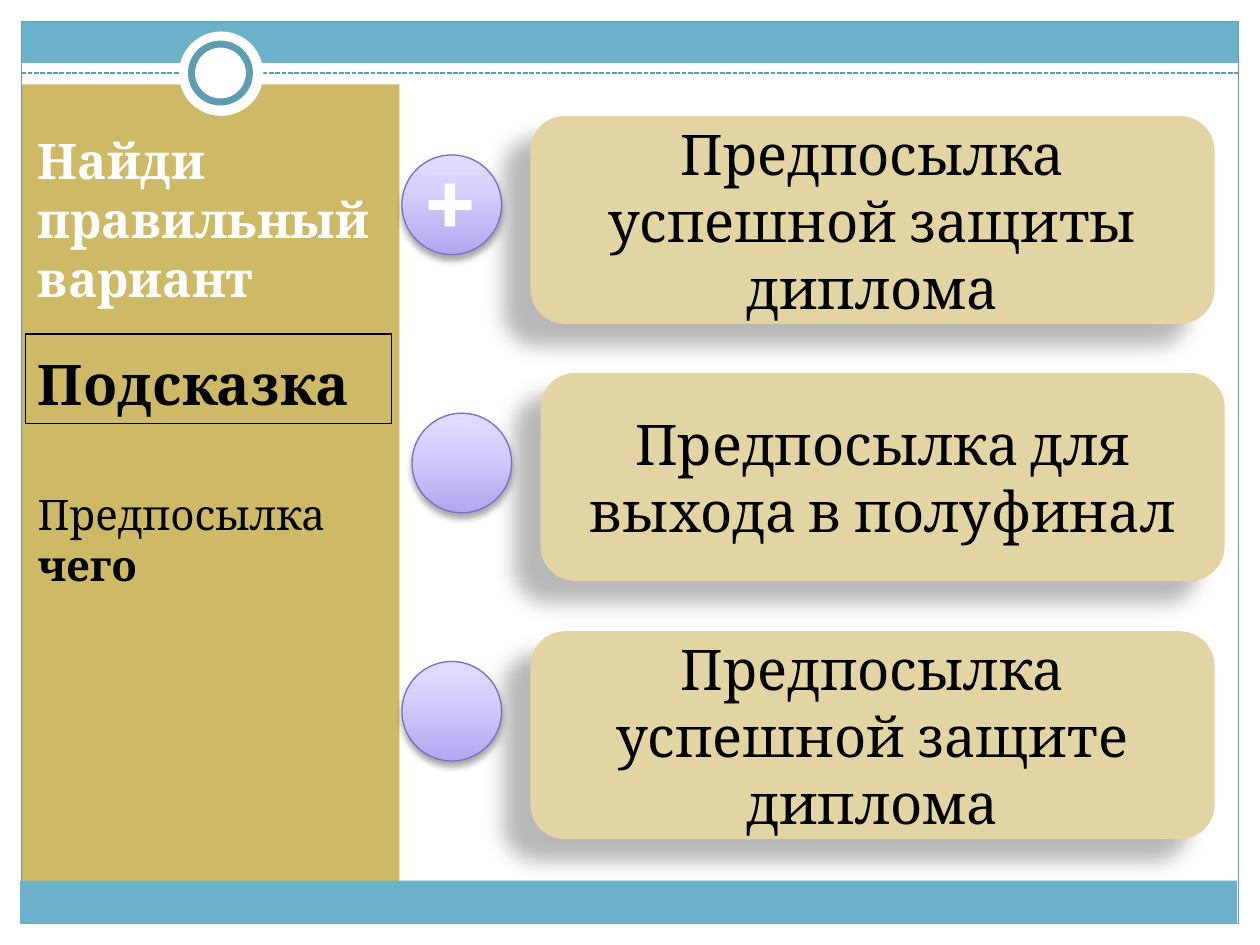
from copy import deepcopy
from dataclasses import dataclass

from lxml import etree
from pptx import Presentation, util as u
from pptx.dml.color import RGBColor
from pptx.enum import dml, shapes, text
from pptx.oxml import ns

KIND = shapes.MSO_SHAPE
LEFT, MID = text.PP_ALIGN.LEFT, text.PP_ALIGN.CENTER


@dataclass(frozen=True)
class Theme:
    font: str = "Cambria"
    blue: str = "6BB1C9"
    edge: str = "5E9CB1"
    gold: str = "CEB966"
    sand: str = "E2D5A3"
    rim: str = "7E6BC9"
    white: str = "FFFFFF"
    black: str = "000000"
    glow: tuple = ((0, "B2A6F0"), (0.65, "D7D0FD"), (1, "E1DDFF"))
    hint: int = 24
    task: int = 28
    main: int = 32
    mark: int = 60
    thin: float = 0.75


class Deck:
    """Draw styled elements on the current slide."""

    def __init__(self, theme):
        self.theme = theme
        self.prs = Presentation()
        self.prs.slide_width, self.prs.slide_height = u.Inches(10), u.Inches(7.5)
        self.slide = self.prs.slides.add_slide(self.prs.slide_layouts[5])

    def rgb(self, code):
        return RGBColor.from_string(code)

    def line(self, item, color, width):
        item.line.color.rgb = self.rgb(color)
        item.line.width = u.Pt(width)

    def shape(self, kind, box, fill=None, line=None, width=None):
        item = self.slide.shapes.add_shape(kind, *map(u.Inches, box))
        item.shadow.inherit = False
        if fill:
            item.fill.solid()
            item.fill.fore_color.rgb = self.rgb(fill)
        else:
            item.fill.background()
        if line:
            self.line(item, line, width or self.theme.thin)
        else:
            item.line.fill.background()
        return item

    def shade(self, item, alpha, blur, dist, angle):
        effect = item._element.spPr.find(ns.qn("a:effectLst"))
        outer = etree.SubElement(
            effect, ns.qn("a:outerShdw"), blurRad=str(u.Pt(blur)),
            dist=str(u.Pt(dist)), dir=str(angle * 60000), rotWithShape="0")
        color = etree.SubElement(outer, ns.qn("a:srgbClr"), val=self.theme.black)
        etree.SubElement(color, ns.qn("a:alpha"), val=str(alpha * 1000))

    def words(self, item, words, size, color, bold=False, align=LEFT,
              anchor=text.MSO_ANCHOR.TOP):
        frame = item.text_frame
        frame.text = words
        frame.word_wrap = True
        frame.auto_size = text.MSO_AUTO_SIZE.NONE
        frame.vertical_anchor = anchor
        para = frame.paragraphs[0]
        para.alignment = align
        self.style(para.runs[0], size, color, bold)
        return para

    def style(self, run, size, color, bold):
        run.font.name, run.font.size = self.theme.font, u.Pt(size)
        run.font.color.rgb, run.font.bold = self.rgb(color), bold

    def label(self, box, words, size, color, bold=False, align=LEFT):
        item = self.slide.shapes.add_textbox(*map(u.Inches, box))
        return self.words(item, words, size, color, bold, align)

    def title(self, box, words):
        item = self.slide.shapes.title
        item.left, item.top, item.width, item.height = map(u.Inches, box)
        self.slide.shapes._spTree.append(item._element)
        self.line(item, self.theme.black, self.theme.thin)
        self.words(item, words, self.theme.main, self.theme.black, True,
                   anchor=text.MSO_ANCHOR.BOTTOM)

    def rule(self, left, right, y):
        ends = map(u.Inches, (left, y, right, y))
        item = self.slide.shapes.add_connector(shapes.MSO_CONNECTOR.STRAIGHT, *ends)
        self.line(item, self.theme.edge, 0.9)
        item.line.dash_style = dml.MSO_LINE.SQUARE_DOT
        etree.SubElement(item._element.spPr, ns.qn("a:effectLst"))

    def card(self, left, top, words):
        item = self.shape(KIND.ROUNDED_RECTANGLE, (left, top, 5.43, 1.65),
                          self.theme.sand)
        self.shade(item, 28, 11.8, 19.7, 141)
        self.words(item, words, self.theme.main, self.theme.black, align=MID,
                   anchor=text.MSO_ANCHOR.MIDDLE)

    def ball(self, left, top):
        item = self.shape(KIND.OVAL, (left, top, 0.79, 0.79), line=self.theme.rim)
        item.fill.gradient()
        item.fill.gradient_angle = 90
        stops = item._element.spPr.find(".//" + ns.qn("a:gsLst"))
        stops.append(deepcopy(stops[0]))
        for stop, (place, color) in zip(item.fill.gradient_stops, self.theme.glow):
            stop.position = place
            stop.color.rgb = self.rgb(color)
        self.shade(item, 35, 4, 3, 90)


def main():
    theme = Theme()
    deck = Deck(theme)
    deck.shape(KIND.RECTANGLE, (0.17, 0.17, 9.66, 0.33), theme.blue)
    deck.shape(KIND.RECTANGLE, (0.17, 0.67, 3, 6.42), theme.gold)
    deck.shape(KIND.RECTANGLE, (0.17, 0.17, 9.66, 7.16), line=theme.edge)
    deck.rule(0.17, 9.83, 0.58)
    deck.shape(KIND.OVAL, (1.42, 0.25, 0.67, 0.67), theme.white)
    deck.shape(KIND.OVAL, (1.52, 0.35, 0.46, 0.46), theme.white, theme.edge, 4)
    deck.shape(KIND.RECTANGLE, (0.16, 6.99, 9.66, 0.34), theme.blue)

    rows = (
        (4.21, 5.01, 5.25, "Предпосылка успешной защите диплома"),
        (4.29, 2.96, 3.28, "Предпосылка для выхода в полуфинал"),
        (4.21, 0.92, 1.23, "Предпосылка успешной защиты диплома"),
    )
    for left, top, _, words in rows:
        deck.card(left, top, words)
    for left, _, top, _ in rows:
        deck.ball(left - 1.02, top)

    deck.label((3.11, 0.99, 0.94, 1.11), "+", theme.mark, theme.white, True, MID)
    deck.title((0.2, 2.65, 2.91, 0.71), "Подсказка")
    task = deck.label((0.2, 0.99, 2.91, 1.97), "Найди правильный вариант",
                      theme.task, theme.white, True)
    task.space_after = u.Pt(10)
    hint = deck.label((0.2, 3.83, 2.99, 0.91), "Предпосылка", theme.hint, theme.black)
    run = hint.add_run()
    run.text = " чего"
    deck.style(run, theme.hint, theme.black, True)
    deck.prs.save("out.pptx")


if __name__ == "__main__":
    main()
